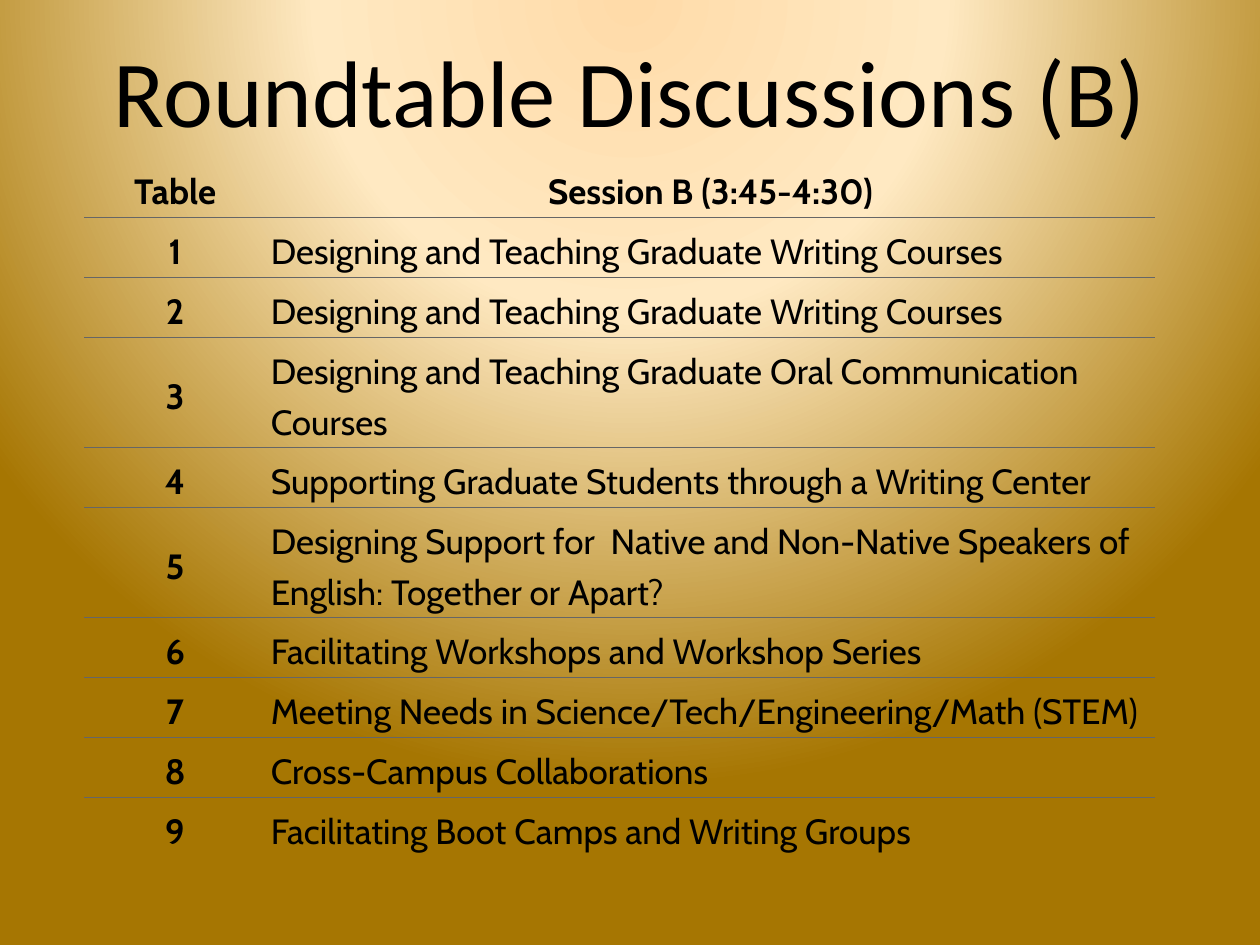
"""Build the roundtable discussions slide with its session table."""
from lxml import etree
from pptx import Presentation
from pptx.dml.color import RGBColor
from pptx.enum.text import MSO_ANCHOR, PP_ALIGN
from pptx.oxml import parse_xml
from pptx.oxml.ns import nsdecls, qn
from pptx.util import Inches, Pt

MIDDLE, TOP = MSO_ANCHOR.MIDDLE, MSO_ANCHOR.TOP
LEFT, CENTER = PP_ALIGN.LEFT, PP_ALIGN.CENTER
PLAIN = "{2D5ABB26-0587-4C30-8999-92F81FD0307C}"
STOPS = [(0, "FFDBA9"), (40, "FFE9C2"), (100, "A67602")]
ROWS = [
    ("Table", "Session B (3:45-4:30)"),
    ("1", "Designing and Teaching Graduate Writing Courses"),
    ("2", "Designing and Teaching Graduate Writing Courses"),
    ("3", "Designing and Teaching Graduate Oral Communication Courses"),
    ("4", "Supporting Graduate Students through a Writing Center"),
    ("5", "Designing Support for  Native and Non-Native Speakers of "
          "English: Together or Apart?"),
    ("6", "Facilitating Workshops and Workshop Series"),
    ("7", "Meeting Needs in Science/Tech/Engineering/Math (STEM)"),
    ("8", "Cross-Campus Collaborations"),
    ("9", "Facilitating Boot Camps and Writing Groups"),
]
WIDTHS = [1.44, 7.06]
HEIGHTS = [0.31, 0.43, 0.43, 0.45, 0.44, 0.6, 0.43, 0.43, 0.43, 0.42]


def style(para, face, size, bold, align):
    para.alignment = align
    for run in para.runs:
        run.font.name = face
        run.font.size = Pt(size)
        run.font.bold = bold
        run.font.color.rgb = RGBColor.from_string("000000")


def rule(cell, color):
    line = parse_xml(
        f'<a:lnB {nsdecls("a")} w="{Pt(0.5)}"><a:solidFill>'
        f'<a:srgbClr val="{color}"/></a:solidFill></a:lnB>')
    cell._tc.get_or_add_tcPr().insert(0, line)


prs = Presentation()
prs.slide_width, prs.slide_height = Inches(10), Inches(7.5)
slide = prs.slides.add_slide(prs.slide_layouts[6])

slide.background.fill.gradient()
grad = slide.background._cSld.find(".//" + qn("a:gradFill"))
for child in list(grad):
    grad.remove(child)
stops = etree.SubElement(grad, qn("a:gsLst"))
for pos, color in STOPS:
    stop = etree.SubElement(stops, qn("a:gs"), pos=str(pos * 1000))
    etree.SubElement(stop, qn("a:srgbClr"), val=color)
focus = etree.SubElement(grad, qn("a:path"), path="circle")
etree.SubElement(focus, qn("a:fillToRect"),
                 l="50000", t="-80000", r="50000", b="180000")

title = slide.shapes.add_textbox(0, 0, Inches(10), Inches(1.42))
frame = title.text_frame
frame.word_wrap = True
frame.vertical_anchor = MIDDLE
frame.text = "Roundtable Discussions (B)"
style(frame.paragraphs[0], "Calibri", 54, False, CENTER)

holder = slide.shapes.add_table(len(ROWS), len(WIDTHS), Inches(0.67),
                                Inches(1.25), Inches(8.5), Inches(5.56))
table = holder.table
table._tbl.tblPr.find(qn("a:tableStyleId")).text = PLAIN
table.horz_banding = False
for col, width in zip(table.columns, WIDTHS):
    col.width = Inches(width)
for row, height in zip(table.rows, HEIGHTS):
    row.height = Inches(height)

for i, texts in enumerate(ROWS):
    for j, text in enumerate(texts):
        cell = table.cell(i, j)
        head = i == 0 or j == 0
        cell.fill.background()
        cell.margin_left = cell.margin_right = Inches(0.04)
        cell.margin_top = cell.margin_bottom = Inches(0.04)
        cell.vertical_anchor = MIDDLE if i and j == 0 else TOP
        cell.text_frame.text = text
        para = cell.text_frame.paragraphs[0]
        para.line_spacing = 1.19
        style(para, "Cabin", 20, head, CENTER if head else LEFT)
        if i < len(ROWS) - 1:
            rule(cell, "666666")

prs.save("out.pptx")
